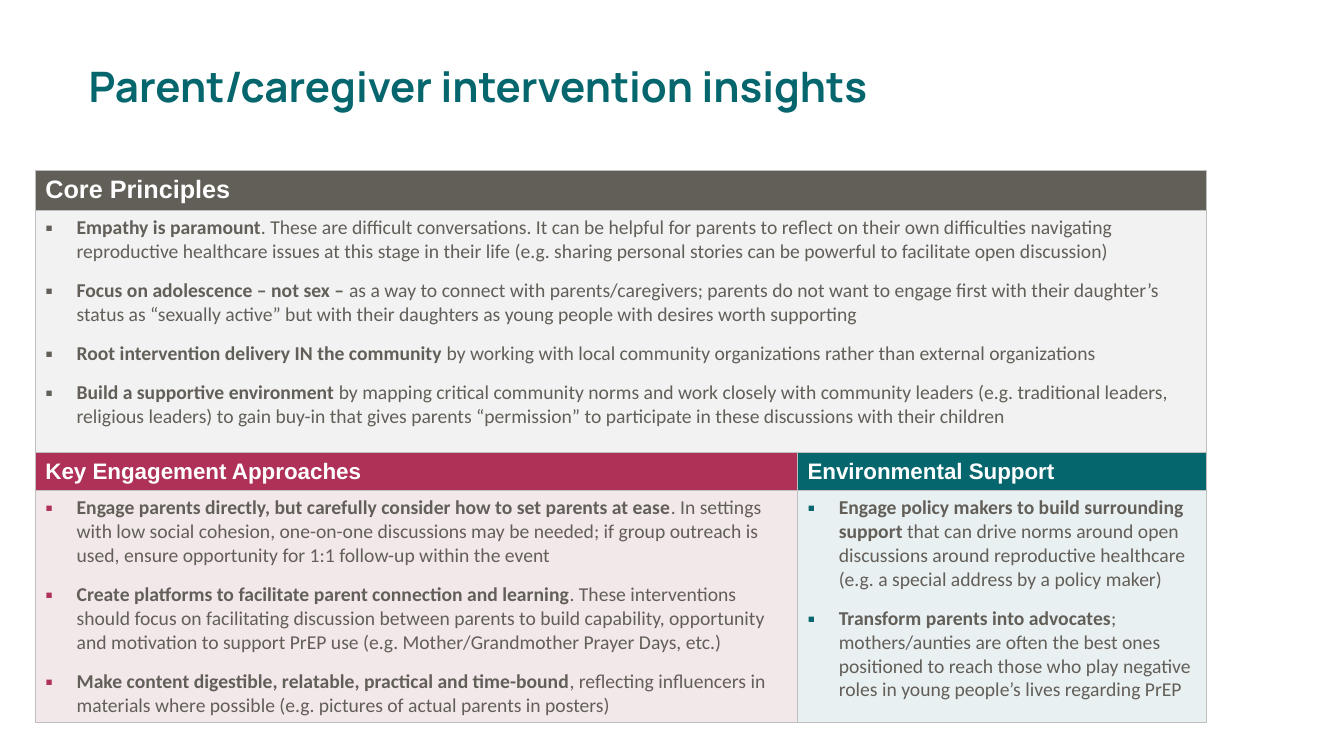
import pptx
import pptx.util
import pptx.dml.color
import pptx.enum.text
import pptx.oxml
import pptx.oxml.ns

COLORS = {
    "teal": "05676D", "teal_tint": "E9F0F1",
    "berry": "AF3158", "berry_tint": "F2E8EA",
    "stone": "625E58", "stone_tint": "F2F2F2",
    "white": "FFFFFF", "border": "BFBFBF",
}
MIDDLE = pptx.enum.text.MSO_ANCHOR.MIDDLE
TOP = pptx.enum.text.MSO_ANCHOR.TOP

PRINCIPLES = [
    ("Empathy is paramount", ". These are difficult conversations. It can be helpful for parents to reflect on their own difficulties navigating reproductive healthcare issues at this stage in their life (e.g. sharing personal stories can be powerful to facilitate open discussion)"),
    ("Focus on adolescence – not sex – ", "as a way to connect with parents/caregivers; parents do not want to engage first with their daughter’s status as “sexually active” but with their daughters as young people with desires worth supporting"),
    ("Root intervention delivery IN the community ", "by working with local community organizations rather than external organizations"),
    ("Build a supportive environment ", "by mapping critical community norms and work closely with community leaders (e.g. traditional leaders, religious leaders) to gain buy-in that gives parents “permission” to participate in these discussions with their children"),
]
APPROACHES = [
    ("Engage parents directly, but carefully consider how to set parents at ease", ". In settings with low social cohesion, one-on-one discussions may be needed; if group outreach is used, ensure opportunity for 1:1 follow-up within the event"),
    ("Create platforms to facilitate parent connection and learning", ". These interventions should focus on facilitating discussion between parents to build capability, opportunity and motivation to support PrEP use (e.g. Mother/Grandmother Prayer Days, etc.)"),
    ("Make content digestible, relatable, practical and time-bound", ", reflecting influencers in materials where possible (e.g. pictures of actual parents in posters)"),
]
SUPPORT = [
    ("Engage policy makers to build surrounding support ", "that can drive norms around open discussions around reproductive healthcare (e.g. a special address by a policy maker)"),
    ("Transform parents into advocates", "; mothers/aunties are often the best ones positioned to reach those who play negative roles in young people’s lives regarding PrEP"),
]


class Deck:
    def __init__(self):
        self.prs = pptx.Presentation()
        self.prs.slide_width = pptx.util.Inches(13.33)
        self.prs.slide_height = pptx.util.Inches(7.5)
        self.s = self.prs.slides.add_slide(self.prs.slide_layouts[6])

    def x(self, percent):
        return round(self.prs.slide_width * percent / 100)

    def y(self, percent):
        return round(self.prs.slide_height * percent / 100)

    def rgb(self, color):
        return pptx.dml.color.RGBColor.from_string(COLORS[color])

    def run(self, p, text, font, size, color, bold=False):
        r = p.add_run()
        r.text = text
        r.font.name = font
        r.font.size = pptx.util.Pt(size)
        r.font.bold = bold
        r.font.color.rgb = self.rgb(color)

    def title(self, text, left, top, width, height):
        sp = self.s.shapes.add_textbox(self.x(left), self.y(top), self.x(width), self.y(height))
        tf = sp.text_frame
        tf.word_wrap = True
        tf.vertical_anchor = MIDDLE
        tf.margin_left = pptx.util.Inches(0.88)
        p = tf.paragraphs[0]
        p.line_spacing = 0.9
        self.run(p, text, "Manrope", 30, "teal", True)

    def cell(self, cell, fill):
        cell.fill.solid()
        cell.fill.fore_color.rgb = self.rgb(fill)
        tc_pr = cell._tc.get_or_add_tcPr()
        for i, side in enumerate("LRTB"):
            tc_pr.insert(i, pptx.oxml.parse_xml(
                f'<a:ln{side} {pptx.oxml.ns.nsdecls("a")} w="12700"><a:solidFill>'
                f'<a:srgbClr val="{COLORS["border"]}"/></a:solidFill></a:ln{side}>'))

    def bullets(self, cell, items, color):
        tf = cell.text_frame
        for i, (lead, rest) in enumerate(items):
            p = tf.add_paragraph() if i else tf.paragraphs[0]
            p_pr = p._p.get_or_add_pPr()
            indent = pptx.util.Inches(0.31)
            p_pr.set("marL", str(indent))
            p_pr.set("indent", str(-indent))
            if i:
                p.space_before = pptx.util.Pt(11)
            for tag in (f'buClr><a:srgbClr val="{COLORS[color]}"/></a:buClr',
                        'buSzPct val="110000"/', 'buFont typeface="Arial"/', 'buChar char="▪"/'):
                name, _, tail = tag.partition(" ")
                head, close, body = tag.partition(">")
                ns = " " + pptx.oxml.ns.nsdecls("a")
                xml = f"<a:{head}{ns}>{body}>" if close else f"<a:{name}{ns} {tail}>"
                p_pr.append(pptx.oxml.parse_xml(xml))
            self.run(p, lead, "Calibri", 14, "stone", True)
            self.run(p, rest, "Calibri", 14, "stone")

    def panels(self, left, top, widths, heights, panels, size, anchor):
        table = self.s.shapes.add_table(
            2, len(panels), self.x(left), self.y(top),
            self.x(sum(widths)), self.y(sum(heights))).table
        table.first_row = table.horz_banding = False
        for row, height in zip(table.rows, heights):
            row.height = self.y(height)
        for i, (heading, color, items) in enumerate(panels):
            table.columns[i].width = self.x(widths[i])
            head, body = table.cell(0, i), table.cell(1, i)
            self.cell(head, color)
            head.vertical_anchor = anchor
            self.run(head.text_frame.paragraphs[0], heading, "Arial", size, "white", True)
            self.cell(body, color + "_tint")
            self.bullets(body, items, color)


def main():
    deck = Deck()
    left, top = 2.63, 22.53
    widths = [56.71, 30.46]
    core_heights, lower_heights = [5.07, 32.27], [5.07, 30.67]
    deck.title("Parent/caregiver intervention insights", 0, 3.47, 86.27, 16.67)
    deck.panels(left, top, [sum(widths)], core_heights,
                [("Core Principles", "stone", PRINCIPLES)], 18, TOP)
    deck.panels(left, top + sum(core_heights), widths, lower_heights,
                [("Key Engagement Approaches", "berry", APPROACHES),
                 ("Environmental Support", "teal", SUPPORT)], 16, MIDDLE)
    deck.prs.save("out.pptx")


if __name__ == "__main__":
    main()
